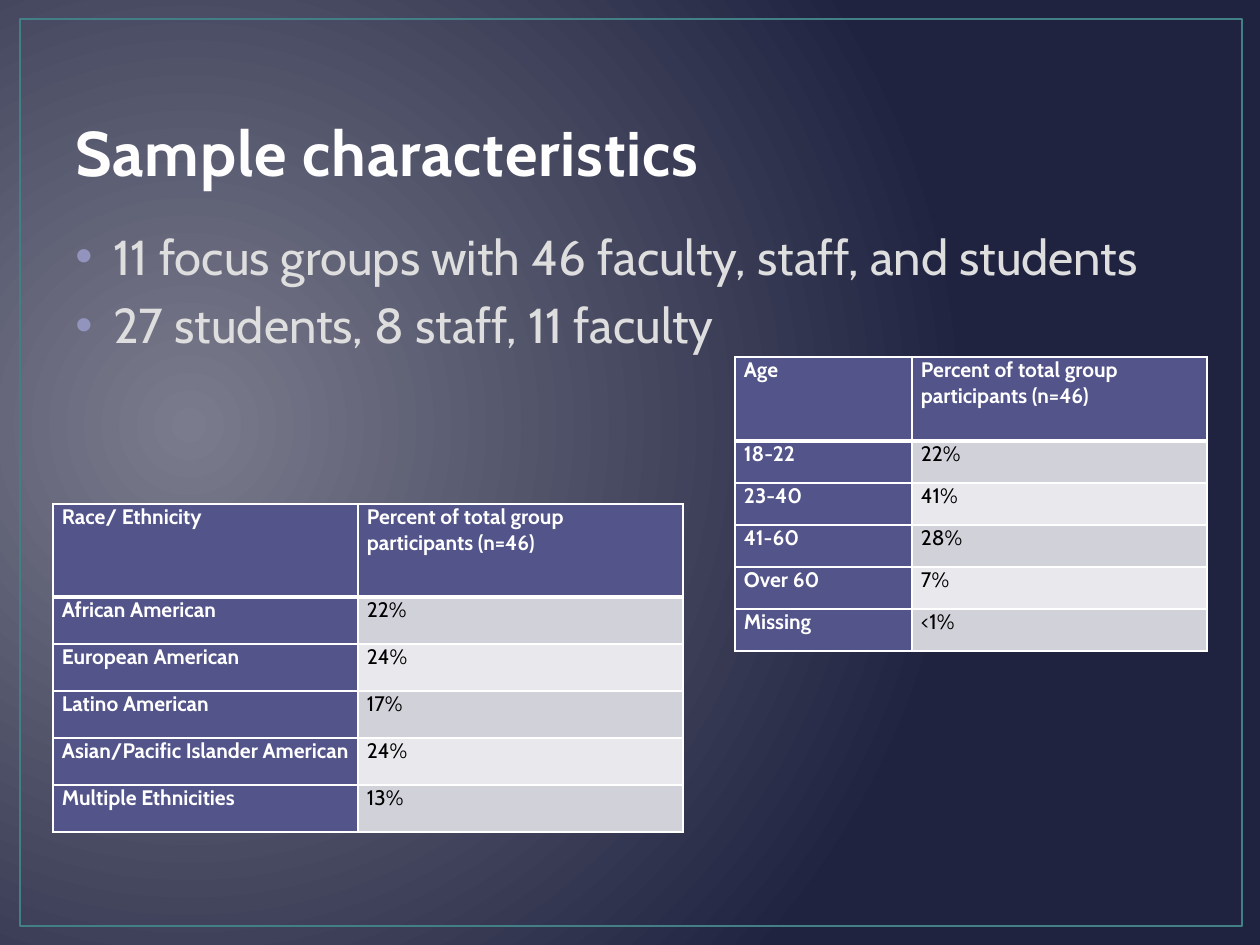
"""Build the sample characteristics slide with its race and age tables."""
from lxml import etree
from pptx import Presentation
from pptx.dml.color import RGBColor
from pptx.enum.shapes import MSO_SHAPE
from pptx.enum.text import MSO_ANCHOR
from pptx.oxml import parse_xml
from pptx.oxml.ns import nsdecls, qn
from pptx.util import Emu, Pt

SHARE = "Percent of total group participants (n=46)"
TABLES = [
    (53, 504, (305, 325), 93, 47, [
        ("Race/ Ethnicity", SHARE),
        ("African American", "22%"),
        ("European American", "24%"),
        ("Latino American", "17%"),
        ("Asian/Pacific Islander American", "24%"),
        ("Multiple Ethnicities", "13%"),
    ]),
    (735, 357, (177, 295), 84, 42, [
        ("Age", SHARE),
        ("18-22", "22%"),
        ("23-40", "41%"),
        ("41-60", "28%"),
        ("Over 60", "7%"),
        ("Missing", "<1%"),
    ]),
]


def px(length):
    return Emu(round(length * 914400 / 126))


def format_runs(paragraph, size, color, bold=False):
    for run in paragraph.runs:
        run.font.name = "Cabin"
        run.font.size = Pt(size)
        run.font.bold = bold
        run.font.color.rgb = RGBColor.from_string(color)


presentation = Presentation()
presentation.slide_width = px(1260)
presentation.slide_height = px(945)
slide = presentation.slides.add_slide(presentation.slide_layouts[6])

background = parse_xml(
    f'<p:bg {nsdecls("p", "a")}><p:bgPr><a:gradFill rotWithShape="1"><a:gsLst>'
    '<a:gs pos="0"><a:srgbClr val="7A7B8C"/></a:gs>'
    '<a:gs pos="100000"><a:srgbClr val="202340"/></a:gs></a:gsLst>'
    '<a:path path="circle"><a:fillToRect l="15000" t="50000" r="85000" b="60000"/></a:path>'
    '</a:gradFill><a:effectLst/></p:bgPr></p:bg>'
)
slide.element.cSld.insert(0, background)

frame = slide.shapes.add_shape(MSO_SHAPE.RECTANGLE, px(20), px(19), px(1222), px(907))
frame.shadow.inherit = False
frame.fill.background()
frame.line.color.rgb = RGBColor.from_string("438086")
frame.line.width = Pt(1.5)

title = slide.shapes.add_textbox(px(63), px(38), px(1134), px(157))
title.text_frame.word_wrap = True
title.text_frame.vertical_anchor = MSO_ANCHOR.BOTTOM
title.text_frame.text = "Sample characteristics"
title_paragraph = title.text_frame.paragraphs[0]
format_runs(title_paragraph, 36, "FEFEFE", True)
title_properties = title_paragraph.runs[0].font._element
title_properties.set("spc", "50")
title_properties.insert(0, parse_xml(
    f'<a:ln {nsdecls("a")} w="13335"><a:solidFill><a:srgbClr val="2A2A45"/></a:solidFill></a:ln>'
))

body = slide.shapes.add_textbox(px(63), px(220), px(1092), px(158))
body.text_frame.word_wrap = True
body.text_frame.text = (
    "11 focus groups with 46 faculty, staff, and students\n"
    "27 students, 8 staff, 11 faculty"
)
for paragraph in body.text_frame.paragraphs:
    format_runs(paragraph, 28, "DEDEDE")
    paragraph.space_before = Pt(5.6)
    properties = paragraph._p.get_or_add_pPr()
    properties.set("marL", str(px(38)))
    properties.set("indent", str(px(-38)))
    bullet_color = etree.SubElement(properties, qn("a:buClr"))
    etree.SubElement(bullet_color, qn("a:srgbClr"), val="9394BE")
    etree.SubElement(properties, qn("a:buFont"), typeface="Arial")
    etree.SubElement(properties, qn("a:buChar"), char="•")

for left, top, widths, header_height, row_height, rows in TABLES:
    heights = [header_height] + [row_height] * (len(rows) - 1)
    table = slide.shapes.add_table(
        len(rows), len(widths), px(left), px(top), px(sum(widths)), px(sum(heights))
    ).table
    for column, width in zip(table.columns, widths):
        column.width = px(width)
    for row_index, values in enumerate(rows):
        table.rows[row_index].height = px(heights[row_index])
        for column_index, value in enumerate(values):
            cell = table.cell(row_index, column_index)
            heading = row_index == 0 or column_index == 0
            band = "D1D1DA" if row_index % 2 else "E9E9ED"
            cell.text_frame.text = value
            format_runs(cell.text_frame.paragraphs[0], 12, "FFFFFF" if heading else "000000", heading)
            cell.margin_left = cell.margin_right = px(9)
            cell.margin_top = cell.margin_bottom = 0
            cell.fill.solid()
            cell.fill.fore_color.rgb = RGBColor.from_string("53548A" if heading else band)
            thick_side = {0: "lnB", 1: "lnT"}.get(row_index)
            for position, side in enumerate(("lnL", "lnR", "lnT", "lnB")):
                line_width = Pt(3 if side == thick_side else 1)
                cell._tc.get_or_add_tcPr().insert(position, parse_xml(
                    f'<a:{side} {nsdecls("a")} w="{line_width}"><a:solidFill>'
                    f'<a:srgbClr val="FFFFFF"/></a:solidFill></a:{side}>'
                ))

presentation.save("out.pptx")
